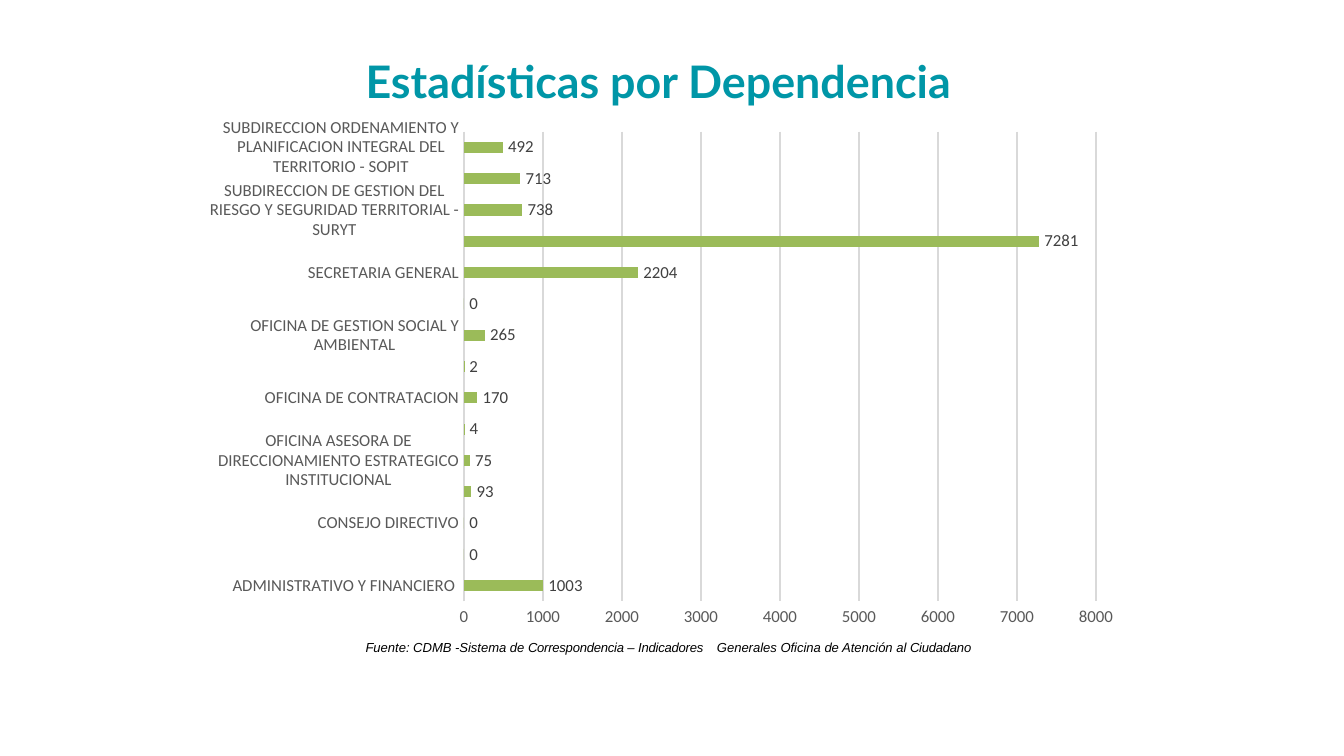
from typing import NamedTuple

from pptx import Presentation
from pptx.chart.data import CategoryChartData
from pptx.dml.color import RGBColor
from pptx.enum.chart import XL_CHART_TYPE as ChartType
from pptx.enum.chart import XL_LABEL_POSITION as LabelPosition
from pptx.enum.chart import XL_TICK_MARK as TickMark
from pptx.enum.text import PP_ALIGN as Align
from pptx.util import Cm, Pt

TEAL, GREEN, GRID = "0096A7", "9BBB59", "D9D9D9"
AXIS_TEXT, LABEL_TEXT, BLACK = "595959", "404040", "000000"


class Department(NamedTuple):
    name: str
    requests: int


class Box(NamedTuple):
    left: float
    top: float
    width: float
    height: float

    def lengths(self) -> list:
        return [Cm(value) for value in self]


# Listed from the bottom bar to the top bar
DEPARTMENTS = [
    Department("ADMINISTRATIVO Y FINANCIERO ", 1003),
    Department("ASAMBLEA GENERAL", 0),
    Department("CONSEJO DIRECTIVO", 0),
    Department("DIRECCION GENERAL", 93),
    Department("OFICINA ASESORA DE DIRECCIONAMIENTO ESTRATEGICO INSTITUCIONAL", 75),
    Department("OFICINA CONTROL INTERNO", 4),
    Department("OFICINA DE CONTRATACION", 170),
    Department("OFICINA DE CONTROL DISCIPLINARIO INTERNO", 2),
    Department("OFICINA DE GESTION SOCIAL Y AMBIENTAL", 265),
    Department("REVISORA FISCAL", 0),
    Department("SECRETARIA GENERAL", 2204),
    Department("SUBDIRECCION DE EVALUACION Y CONTROL AMBIENTAL", 7281),
    Department("SUBDIRECCION DE GESTION DEL RIESGO Y SEGURIDAD TERRITORIAL - SURYT", 738),
    Department("SUBDIRECCION DE GESTION INTEGRAL DE LA OFERTA AMBIENTAL- SUGOA", 713),
    Department("SUBDIRECCION ORDENAMIENTO Y PLANIFICACION INTEGRAL DEL TERRITORIO - SOPIT", 492),
]


def color(value: str) -> RGBColor:
    return RGBColor.from_string(value)


def style_font(font, name: str, size: float, hex_color: str) -> None:
    font.name = name
    font.size = Pt(size)
    font.color.rgb = color(hex_color)


def add_paragraph_box(slide, box: Box, top_inset: float = 0):
    """Add a text box with tight margins and return its paragraph."""
    frame = slide.shapes.add_textbox(*box.lengths()).text_frame
    frame.word_wrap = True
    frame.margin_left = frame.margin_right = frame.margin_bottom = 0
    frame.margin_top = Cm(top_inset)
    paragraph = frame.paragraphs[0]
    paragraph.alignment = Align.LEFT
    return paragraph


def add_title(slide) -> None:
    paragraph = add_paragraph_box(slide, Box(6.91, 1.02, 13.67, 1.02))
    paragraph.text = "Estadísticas por Dependencia"
    style_font(paragraph.font, "Lato", 24, TEAL)
    paragraph.font.bold = True


def add_source_note(slide) -> None:
    paragraph = add_paragraph_box(slide, Box(6.91, 12.04, 13.54, 0.33), 0.05)
    # Each run carries its letter spacing in hundredths of a point
    for text, spacing in [
        ("Fuente: CDMB ", 0),
        ("-", -20),
        ("Sistema de ", 0),
        ("Correspondencia ", -10),
        ("– ", 0),
        ("Indicadores", -10),
        (" ", 540),
        ("Generales Oficina de Atención al ", 0),
        ("Ciudadano", -10),
    ]:
        run = paragraph.add_run()
        run.text = text
        run.font._element.set("spc", str(spacing))
    style_font(paragraph.font, "Arial", 7, BLACK)
    paragraph.font.italic = True


def style_axis(axis) -> None:
    axis.major_tick_mark = axis.minor_tick_mark = TickMark.NONE
    style_font(axis.tick_labels.font, "Calibri", 9, AXIS_TEXT)


def style_line(line) -> None:
    line.color.rgb = color(GRID)
    line.width = Pt(0.75)


def add_department_chart(slide) -> None:
    data = CategoryChartData()
    data.categories = [department.name for department in DEPARTMENTS]
    data.add_series("Series 1", [department.requests for department in DEPARTMENTS])
    box = Box(3.61, 2.03, 17.78, 10.01)
    chart = slide.shapes.add_chart(ChartType.BAR_CLUSTERED, *box.lengths(), data).chart
    chart.has_legend = chart.has_title = False
    style_font(chart.font, "Calibri", 10, BLACK)

    # Axes
    style_axis(chart.category_axis)
    style_line(chart.category_axis.format.line)
    style_axis(chart.value_axis)
    chart.value_axis.format.line.fill.background()
    chart.value_axis.has_major_gridlines = True
    style_line(chart.value_axis.major_gridlines.format.line)

    # Bars and their values
    plot = chart.plots[0]
    plot.gap_width = 182
    plot.vary_by_categories = False
    series = plot.series[0]
    series.format.fill.solid()
    series.format.fill.fore_color.rgb = color(GREEN)
    labels = series.data_labels
    labels.show_value = True
    labels.position = LabelPosition.OUTSIDE_END
    style_font(labels.font, "Calibri", 9, LABEL_TEXT)


def main() -> None:
    presentation = Presentation()
    presentation.slide_width, presentation.slide_height = Cm(25.4), Cm(14.29)
    slide = presentation.slides.add_slide(presentation.slide_layouts[6])
    add_source_note(slide)
    add_title(slide)
    add_department_chart(slide)
    presentation.save("out.pptx")


if __name__ == "__main__":
    main()
